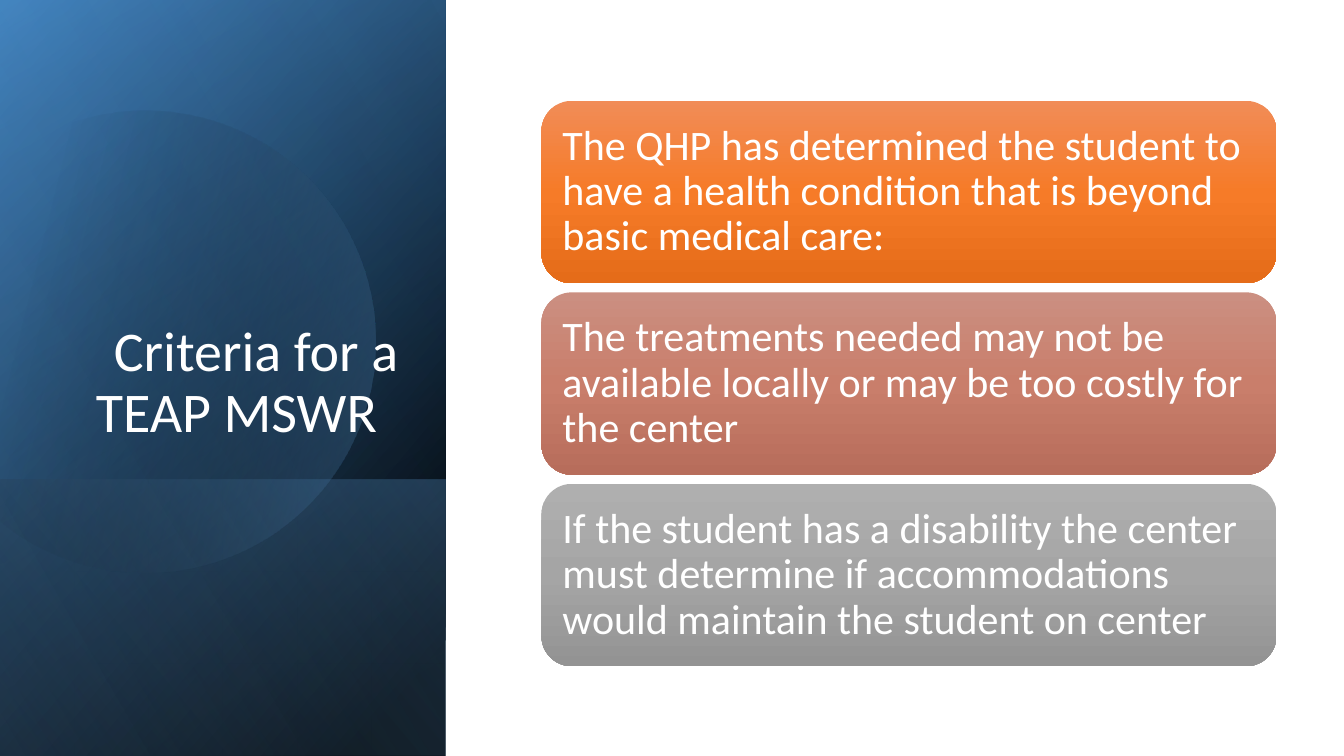
from dataclasses import dataclass
from math import cos, radians, sin, tan

from lxml import etree
from pptx import Presentation
from pptx.dml.color import RGBColor
from pptx.enum.shapes import MSO_SHAPE
from pptx.enum.text import MSO_ANCHOR, MSO_AUTO_SIZE, PP_ALIGN
from pptx.oxml.ns import qn
from pptx.util import Inches, Pt

RECTANGLE = MSO_SHAPE.RECTANGLE
ROUNDED = MSO_SHAPE.ROUNDED_RECTANGLE
BOTTOM, MIDDLE = MSO_ANCHOR.BOTTOM, MSO_ANCHOR.MIDDLE
LEFT, RIGHT = PP_ALIGN.LEFT, PP_ALIGN.RIGHT
NO_FIT = MSO_AUTO_SIZE.NONE
TITLE_ONLY = 5

SLIDE_W, SLIDE_H = 13.33, 7.5
PANEL_W = 4.42
BAND_H = 2.74
CARD_LEFT, CARD_TOP = 5.37, 1.0
CARD_W, CARD_H, CARD_PITCH = 7.29, 1.81, 1.9


@dataclass(frozen=True)
class Theme:
    """Colours, gradients (position, colour, opacity) and type sizes."""

    font: str = "Calibri"
    text: str = "FFFFFF"
    title_size: int = 40
    card_size: int = 30
    base: tuple = ((8, "000000", 100), (100, "2E75B6", 100))
    glow: tuple = ((0, "000000", 0), (99, "5B9BD5", 46))
    band: tuple = ((2, "5B9BD5", 29), (100, "000000", 30))
    disc: tuple = ((29, "000000", 0), (100, "5B9BD5", 43))
    sheen: tuple = ((0, "000000", 0), (99, "9DC3E6", 11))
    cards: tuple = (
        ("F18C57", "F67B28", "E56C19"),
        ("CB8F81", "C97E6B", "B76D5B"),
        ("AFAFAF", "A5A5A5", "939393"),
    )


THEME = Theme()

CRITERIA = (
    "The QHP has determined the student to have a health condition that is beyond basic medical care:",
    "The treatments needed may not be available locally or may be too costly for the center",
    "If the student has a disability the center must determine if accommodations would maintain the student on center",
)


def paint(shape, stops, angle):
    """Give a shape a linear gradient, with no line and no shadow."""
    shape.shadow.inherit = False
    shape.line.fill.background()
    shape.fill.gradient()
    gradient = shape._element.spPr.find(qn("a:gradFill"))
    gradient.set("rotWithShape", "1")
    stop_list = gradient.find(qn("a:gsLst"))
    for preset_stop in list(stop_list):
        stop_list.remove(preset_stop)
    for position, colour, opacity in stops:
        stop = etree.SubElement(stop_list, qn("a:gs"), pos=str(position * 1000))
        tint = etree.SubElement(stop, qn("a:srgbClr"), val=colour)
        if opacity < 100:
            etree.SubElement(tint, qn("a:alpha"), val=str(opacity * 1000))
    direction = gradient.find(qn("a:lin"))
    direction.set("ang", str(angle * 60000))
    direction.set("scaled", "0")


def write(frame, text, size, align, anchor):
    """Write one formatted run into a text frame."""
    frame.word_wrap = True
    frame.auto_size = NO_FIT
    frame.vertical_anchor = anchor
    paragraph = frame.paragraphs[0]
    paragraph.alignment = align
    paragraph.line_spacing = 0.9
    run = paragraph.add_run()
    run.text = text
    run.font.name = THEME.font
    run.font.size = Pt(size)
    run.font.color.rgb = RGBColor.from_string(THEME.text)


def add_panel(slide, height, stops, angle):
    """Add a mirrored quarter-turned panel at the bottom left of the slide."""
    left = (PANEL_W - height) / 2
    top = SLIDE_H - (height + PANEL_W) / 2
    panel = slide.shapes.add_shape(
        RECTANGLE, Inches(left), Inches(top), Inches(height), Inches(PANEL_W)
    )
    panel.rotation = 90
    panel._element.spPr.find(qn("a:xfrm")).set("flipH", "1")
    paint(panel, stops, angle)


def curve_segments(shape):
    """Turn each three straight segments of an outline into one Bezier curve."""
    segments = list(shape._element.iter(qn("a:lnTo")))
    for first, second, third in zip(*[iter(segments)] * 3):
        curve = etree.Element(qn("a:cubicBezTo"))
        first.addprevious(curve)
        for segment in (first, second, third):
            curve.append(segment[0])
            segment.getparent().remove(segment)


def add_disc(slide, centre_x, centre_y, radius, breaks):
    """Add a tilted disc, drawn as arcs between breaks and closed by a chord."""

    def rim_point(degree, pull=0.0):
        """Return a rim point, pulled along its tangent."""
        x, y = cos(radians(degree)), sin(radians(degree))
        return (
            Inches(centre_x + radius * (x - pull * y)),
            Inches(centre_y + radius * (y + pull * x)),
        )

    builder = slide.shapes.build_freeform(*rim_point(breaks[0]))
    for start, end in zip(breaks, breaks[1:]):
        pull = 4 / 3 * tan(radians(end - start) / 4)
        handles = [rim_point(start, pull), rim_point(end, -pull), rim_point(end)]
        builder.add_line_segments(handles, close=end == breaks[-1])
    disc = builder.convert_to_shape()
    curve_segments(disc)
    disc.rotation = 343.9
    paint(disc, THEME.disc, 30)


def add_title(slide, text):
    """Place the title placeholder over the panels."""
    title = slide.shapes.title
    slide.shapes._spTree.append(title._element)
    title.left, title.top = Inches(0.64), Inches(1.84)
    title.width, title.height = Inches(3.41), Inches(2.62)
    write(title.text_frame, text, THEME.title_size, RIGHT, BOTTOM)


def add_card(slide, row, text, colours):
    """Add one rounded criterion card on its row."""
    card = slide.shapes.add_shape(
        ROUNDED,
        Inches(CARD_LEFT),
        Inches(CARD_TOP + row * CARD_PITCH),
        Inches(CARD_W),
        Inches(CARD_H),
    )
    paint(card, [(i * 50, colour, 100) for i, colour in enumerate(colours)], 90)
    frame = card.text_frame
    frame.margin_left = frame.margin_right = Inches(0.12)
    frame.margin_top = frame.margin_bottom = Inches(0.12)
    write(frame, text, THEME.card_size, LEFT, MIDDLE)


def main():
    """Build and save the slide."""
    deck = Presentation()
    deck.slide_width, deck.slide_height = Inches(SLIDE_W), Inches(SLIDE_H)
    slide = deck.slides.add_slide(deck.slide_layouts[TITLE_ONLY])
    add_panel(slide, SLIDE_H, THEME.base, 50)
    add_panel(slide, SLIDE_H, THEME.glow, 30)
    add_panel(slide, BAND_H, THEME.band, 130)
    add_disc(slide, 1.43, 3.35, 2.29, (-118, -90, 0, 90, 150))
    add_panel(slide, SLIDE_H, THEME.sheen, 120)
    add_title(slide, "Criteria for a TEAP MSWR\t")
    for row, (criterion, colours) in enumerate(zip(CRITERIA, THEME.cards)):
        add_card(slide, row, criterion, colours)
    deck.save("out.pptx")


if __name__ == "__main__":
    main()
